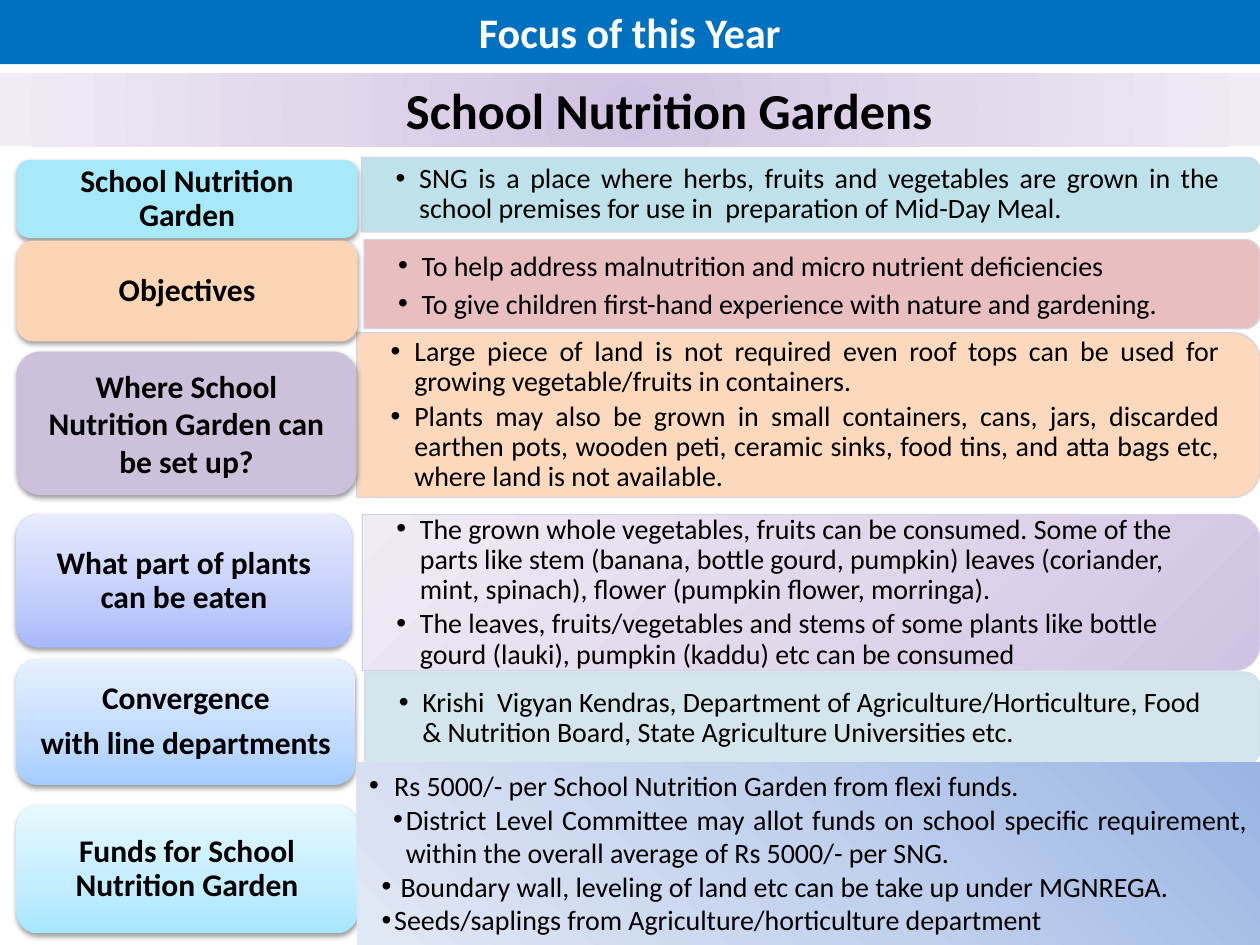
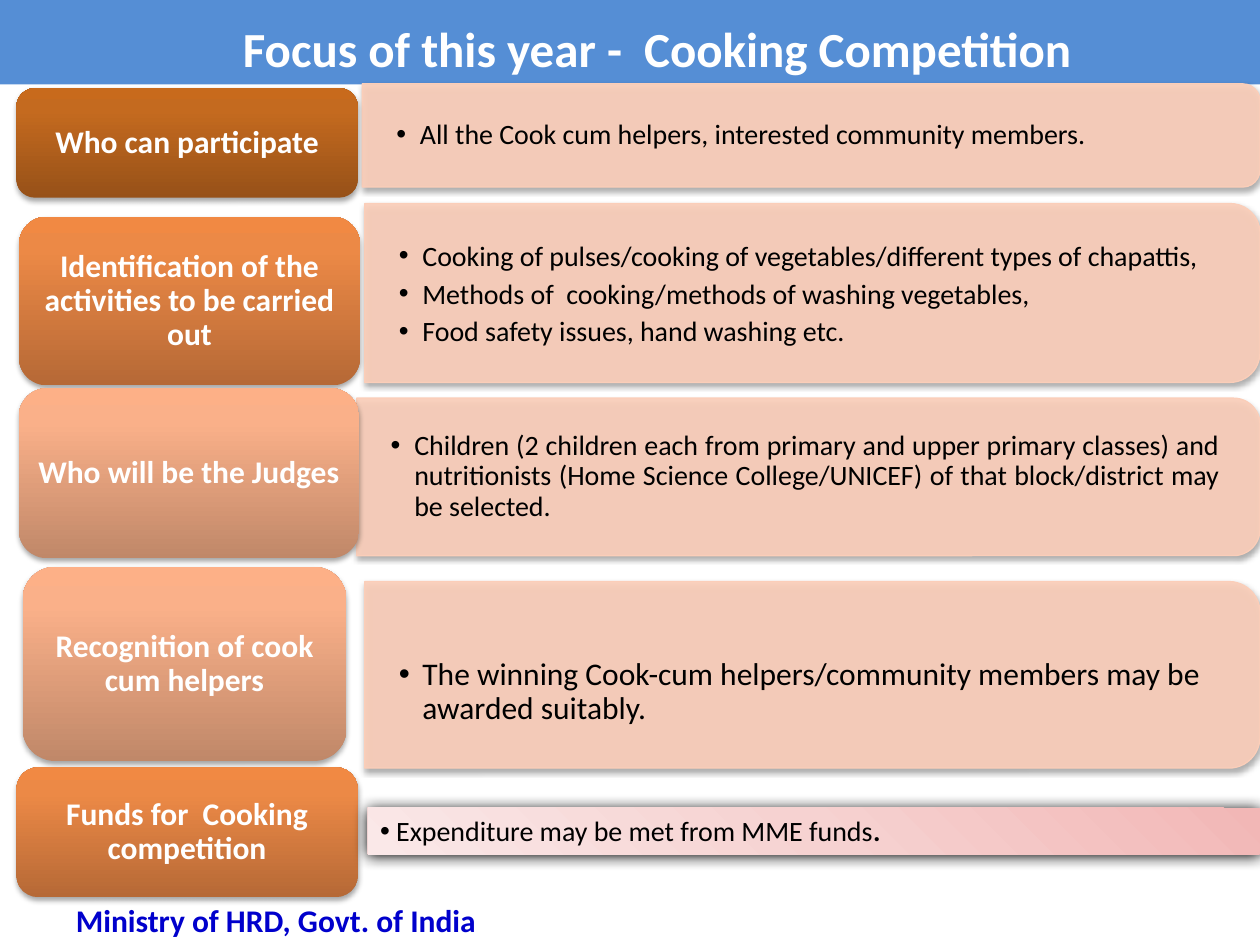
"""Build two slides on school nutrition gardens and a cooking contest."""
from lxml.etree import SubElement as Sub
from pptx import Presentation
from pptx.dml.color import RGBColor
from pptx.enum.shapes import MSO_SHAPE as Geo
from pptx.enum.text import MSO_ANCHOR as Anchor, MSO_AUTO_SIZE as Auto, PP_ALIGN as Align
from pptx.oxml.ns import qn
from pptx.util import Pt

FONT = "Calibri"
WIDE, HIGH = 720, 540
MID, FULL, LEFT = Align.CENTER, Align.JUSTIFY, Align.LEFT

BLACK = RGBColor(0, 0, 0)
WHITE = RGBColor(255, 255, 255)
NAVY = RGBColor(0x00, 0x00, 0xCC)
BLUE = RGBColor(0x00, 0x70, 0xC0)
SKY = RGBColor(0x55, 0x8E, 0xD5)
AQUA = RGBColor(0xA7, 0xE9, 0xF9)
TEAL = RGBColor(0xB7, 0xDE, 0xE8)
MIST = RGBColor(0xD0, 0xE3, 0xEA)
ROSE = RGBColor(0xE6, 0xB9, 0xB8)
PEACH = RGBColor(0xFC, 0xD5, 0xB5)
MAUVE = RGBColor(0xCC, 0xC1, 0xDA)
SALMON = RGBColor(0xFB, 0xCE, 0xB9)
EDGE = RGBColor(0xD4, 0xD5, 0xE4)


def blend(stops, *codes):
    """Pair gradient stops with hex colours."""
    return [(stop, RGBColor.from_string(code)) for stop, code in zip(stops, codes)]


EVEN, SOFT, DEEP = (0, 50, 100), (0, 35, 100), (0, 80, 100)
LILAC = blend(EVEN, "D0C2E2", "E1D8EC", "F0ECF5")
STEEL = blend(EVEN, "9AB5E4", "C2D1ED", "E1E8F5")
PINK = blend(EVEN, "F2B7B6", "F6D2D1", "FAE8E8")
IRIS = blend(SOFT, "A7B9FB", "C2CDFB", "E6EBFF")
AZURE = blend(SOFT, "A5CCFF", "BFDAFF", "E7F1FF")
ICE = blend(SOFT, "A7E6FF", "C1EDFF", "E7F8FF")
BROWN = blend(DEEP, "975118", "C46A1F", "C86A1C")
RUST = blend(DEEP, "B66936", "EC8946", "F18943")
TAN = blend(DEEP, "C08869", "FAB089", "FDB087")

GARDEN_SHADE = (38, 3.1, 1.6)
COOK_SHADE = (35, 3.1, 1.8)
STRIP_SHADE = (100, 8.5, 1)


def paint(shape, fill, angle=270, focus=None):
    """Fill with one colour, or with a linear or radial gradient."""
    if isinstance(fill, RGBColor):
        shape.fill.solid()
        shape.fill.fore_color.rgb = fill
        return
    shape.fill.gradient()
    grad = shape.element.spPr.find(qn("a:gradFill"))
    for child in list(grad):
        grad.remove(child)
    stops = Sub(grad, qn("a:gsLst"))
    for stop, color in fill:
        mark = Sub(stops, qn("a:gs"), pos=str(stop * 1000))
        Sub(mark, qn("a:srgbClr"), val=str(color))
    if focus:
        way = Sub(grad, qn("a:path"), {"path": "circle"})
        sides = {side: str(part * 1000) for side, part in zip("ltrb", focus)}
        Sub(way, qn("a:fillToRect"), sides)
    else:
        Sub(grad, qn("a:lin"), ang=str(angle * 60000), scaled="0")


def shade(shape, look):
    """Drop a black shadow straight down, or none."""
    shape.shadow.inherit = False
    if not look:
        return
    alpha, blur, dist = look
    drop = Sub(shape.element.spPr.find(qn("a:effectLst")), qn("a:outerShdw"),
               blurRad=str(Pt(blur)), dist=str(Pt(dist)), dir="5400000",
               algn="ctr", rotWithShape="0")
    color = Sub(drop, qn("a:srgbClr"), val=str(BLACK))
    Sub(color, qn("a:alpha"), val=str(alpha * 1000))


def block(slide, geo, box, fill, look=None, **grad):
    """Add a filled shape with no outline."""
    shape = slide.shapes.add_shape(geo, *map(Pt, box))
    paint(shape, fill, **grad)
    shape.line.fill.background()
    shade(shape, look)
    return shape


def setup(shape, pads=(7.2, 3.6, 7.2, 3.6), anchor=Anchor.TOP):
    """Set up the text frame and return it."""
    frame = shape.text_frame
    frame.auto_size = Auto.NONE
    frame.word_wrap = True
    frame.vertical_anchor = anchor
    (frame.margin_left, frame.margin_top,
     frame.margin_right, frame.margin_bottom) = map(Pt, pads)
    return frame


def add_run(para, text, size, color, bold=False):
    """Add one run of text."""
    run = para.add_run()
    run.text = text
    font = run.font
    font.name, font.size, font.bold = FONT, Pt(size), bold
    font.color.rgb = color


def add_para(frame, text, size, color=BLACK, bold=False, align=MID,
             lead=1.0, after=0, hang=None):
    """Add a paragraph, with a bullet when hang gives margin and indent."""
    para = frame.paragraphs[0]
    if para.runs:
        para = frame.add_paragraph()
    para.alignment, para.line_spacing = align, lead
    para.space_before, para.space_after = Pt(0), Pt(after)
    if hang:
        props = para._p.get_or_add_pPr()
        margin, indent = hang
        props.set("marL", str(Pt(margin)))
        props.set("indent", str(Pt(indent)))
        Sub(props, qn("a:buFont"), typeface="Arial")
        Sub(props, qn("a:buChar"), char="•")
    add_run(para, text, size, color, bold)
    return para


def head(slide, text, box, size, color, pads, lead=1.0):
    """Place and format the title."""
    title = slide.shapes.title
    title.left, title.top, title.width, title.height = map(Pt, box)
    add_para(setup(title, pads, Anchor.MIDDLE), text, size, color, True, lead=lead)
    return title


def pill(slide, box, lines, fill, look, color=BLACK, pad=5, lead=0.9):
    """Add a rounded topic label."""
    shape = block(slide, Geo.ROUNDED_RECTANGLE, box, fill, look)
    frame = setup(shape, (pad, 3, pad, 3), Anchor.MIDDLE)
    for line in lines:
        add_para(frame, line, 18, color, True, lead=lead, after=6)


def card(slide, x, y, high, lines, fill, edge=EDGE, look=None,
         align=FULL, lead=0.9, size=16, drop=0):
    """Add a panel rounded on the right, with bullets over it."""
    wide = WIDE - x
    box = (x + (wide - high) / 2, y + (high - wide) / 2, high, wide)
    shape = block(slide, Geo.ROUND_2_SAME_RECTANGLE, box, fill, look, angle=135)
    shape.rotation = 90
    shape.line.color.rgb = edge
    shape.line.width = Pt(0.75)
    if isinstance(fill, RGBColor):
        color = shape.element.spPr.find(qn("a:solidFill")).find(qn("a:srgbClr"))
        Sub(color, qn("a:alpha"), val="90000")
    note = slide.shapes.add_textbox(*map(Pt, (x, y, wide, high)))
    frame = setup(note, (19.5, 10 + drop, 23, 10), Anchor.MIDDLE)
    for line in lines:
        add_para(frame, line, size, align=align, lead=lead, after=2.4, hang=(13.5, -13.5))


def garden(slide):
    """Fill the nutrition garden slide."""
    title = head(slide, "School Nutrition Gardens", (0, 41.8, WIDE, 41.8), 28.8, BLACK,
                 (50, 3, 5, 3))
    paint(title, LILAC, focus=(50, 50, 50, 50))
    card(slide, 206.6, 90, 42.5, [
        "SNG is a place where herbs, fruits and vegetables are grown in the "
        "school premises for use in  preparation of Mid-Day Meal."], TEAL)
    card(slide, 208, 136.8, 51, [
        "To help address malnutrition and micro nutrient deficiencies",
        "To give children first-hand experience with nature and gardening."],
        ROSE, lead=1.0)
    card(slide, 203.8, 190, 94.3, [
        "Large piece of land is not required even roof tops can be used for "
        "growing vegetable/fruits in containers.",
        "Plants may also be grown in small containers, cans, jars, discarded "
        "earthen pots, wooden peti, ceramic sinks, food tins, and atta bags etc, "
        "where land is not available."], PEACH)
    card(slide, 207, 294, 89.3, [
        "The grown whole vegetables, fruits can be consumed. Some of the parts "
        "like stem (banana, bottle gourd, pumpkin) leaves (coriander, mint, "
        "spinach), flower (pumpkin flower, morringa).",
        "The leaves, fruits/vegetables and stems of some plants like bottle "
        "gourd (lauki), pumpkin (kaddu) etc can be consumed"], LILAC, align=LEFT)
    card(slide, 208.4, 384, 53.3, [
        "Krishi  Vigyan Kendras, Department of Agriculture/Horticulture, Food "
        "& Nutrition Board, State Agriculture Universities etc."],
        MIST, MIST, align=LEFT)

    x, look = 9.4, GARDEN_SHADE
    pill(slide, (x, 91.4, 195, 44.6), ["School Nutrition Garden"], AQUA, look)
    pill(slide, (x, 137.5, 195, 57.6), ["Objectives"], PEACH, look)
    pill(slide, (x, 200.9, 194.4, 82), ["Where School Nutrition Garden can be set up?"],
         MAUVE, look, pad=11, lead=1.0)
    pill(slide, (x, 293.8, 191.5, 76.3), ["What part of plants can be eaten"], IRIS, look)
    pill(slide, (x, 376.6, 193.7, 72), ["Convergence", "with line departments"], AZURE, look)
    pill(slide, (x, 460, 195, 73.4), ["Funds for School Nutrition Garden"], ICE, look)

    funds = block(slide, Geo.RECTANGLE, (203.8, 435.6, 516.2, 104.4), STEEL,
                  focus=(100, 0, 0, 100))
    frame = setup(funds)
    for text, hang in (
            ("Rs 5000/- per School Nutrition Garden from flexi funds.", (14.4, -14.4)),
            ("District Level Committee may allot funds on school specific "
             "requirement, within the overall average of Rs 5000/- per SNG.", (21, -7.2)),
            (" Boundary wall, leveling of land etc can be take up under MGNREGA.",
             (14.4, -7.2)),
            ("Seeds/saplings from Agriculture/horticulture department", (14.4, -7.2))):
        add_para(frame, text, 16, align=FULL, hang=hang)

    band = block(slide, Geo.RECTANGLE, (0, 0, WIDE, 36.7), BLUE)
    add_para(setup(band), "Focus of this Year", 24, WHITE, True)


def contest(slide):
    """Fill the cooking competition slide."""
    title = head(slide, "Focus of this year -  Cooking Competition",
                 (0, -6.5, WIDE, 54.7), 28, WHITE, (38, 3.6, 7.2, 3.6), lead=1.4)
    paint(title, SKY)
    look = COOK_SHADE
    for x, y, high, lines, style in (
            (207, 47.9, 59, ["All the Cook cum helpers, interested community members."], {}),
            (208.4, 116.3, 102.2, [
                "Cooking of pulses/cooking of vegetables/different types of chapattis,",
                "Methods of  cooking/methods of washing vegetables,",
                "Food safety issues, hand washing etc."], {"lead": 1.0}),
            (203.8, 227.5, 90, [
                "Children (2 children each from primary and upper primary classes) and "
                "nutritionists (Home Science College/UNICEF) of that block/district "
                "may be selected."], {}),
            (208.4, 332.3, 106.6, [
                "The winning Cook-cum helpers/community members may be awarded suitably."],
             {"align": LEFT, "size": 18, "drop": 20})):
        card(slide, x, y, high, lines, SALMON, SALMON, look, **style)

    for box, text, fill in (
            ((9.4, 50.4, 195, 62.6), "Who can participate", BROWN),
            ((10.8, 123.8, 195, 96.5), "Identification of the activities to be carried out", RUST),
            ((10.8, 221.8, 194.4, 97.2), "Who will be the Judges", TAN),
            ((13, 324, 185, 110.9), "Recognition of cook cum helpers", TAN),
            ((9.4, 438.5, 195, 74.2), "Funds for  Cooking competition", RUST)):
        pill(slide, box, [text], fill, look, WHITE)

    strip = block(slide, Geo.RECTANGLE, (210.2, 461.5, 509.8, 26.6), PINK,
                  STRIP_SHADE, angle=135)
    para = add_para(setup(strip), " Expenditure may be met from MME funds", 16,
                    align=FULL, hang=(0, 0))
    add_run(para, ".", 16, BLACK, True)

    foot = slide.shapes.add_textbox(*map(Pt, (16.6, 511.2, 282.2, 28.8)))
    add_para(setup(foot), "Ministry of HRD, Govt. of India", 18, NAVY, True)


def main():
    """Build and save the deck."""
    deck = Presentation()
    deck.slide_width, deck.slide_height = Pt(WIDE), Pt(HIGH)
    for fill in (garden, contest):
        fill(deck.slides.add_slide(deck.slide_layouts[5]))
    deck.save("out.pptx")


if __name__ == "__main__":
    main()
